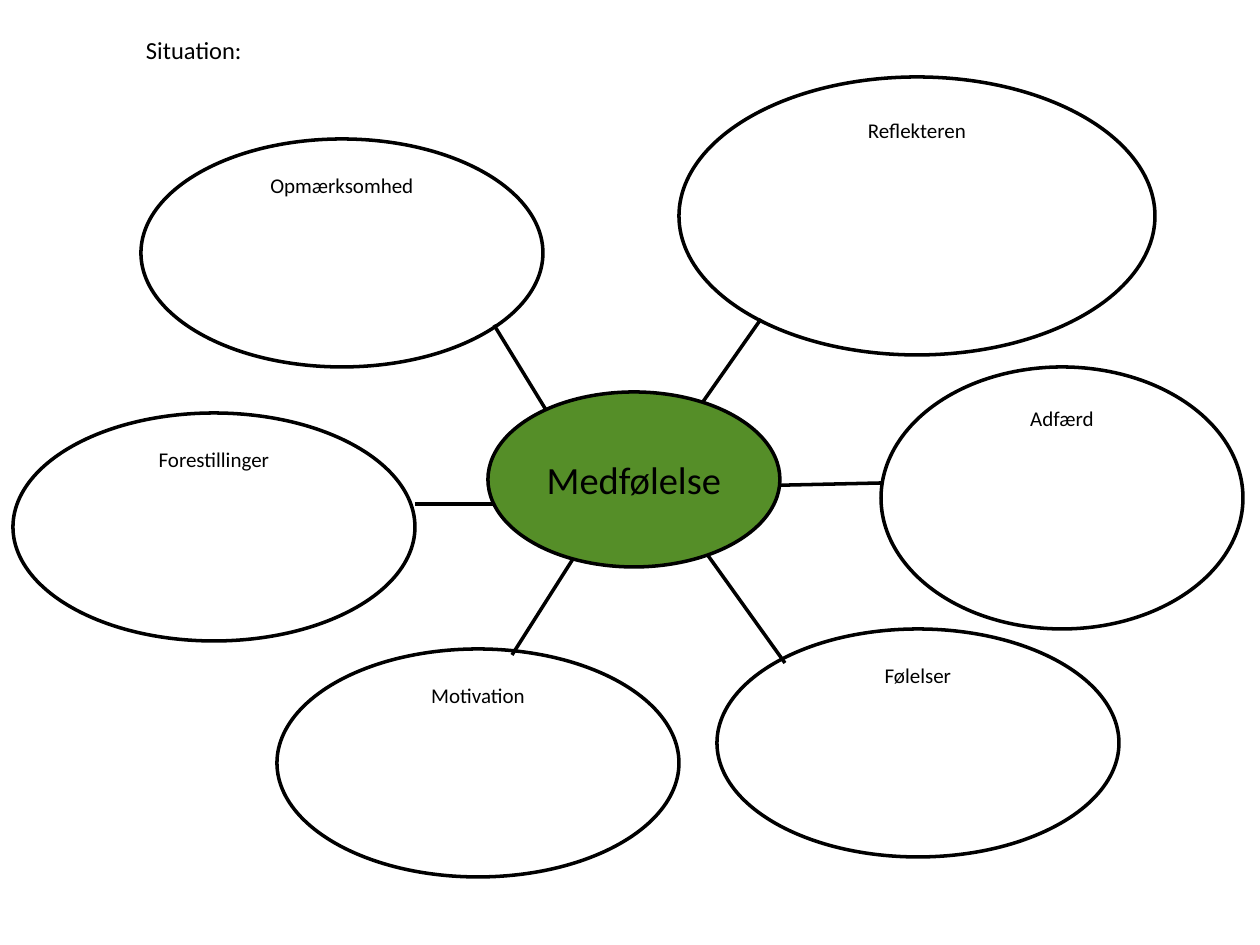
from pptx import Presentation
from pptx.dml.color import RGBColor
from pptx.enum.shapes import MSO_CONNECTOR, MSO_SHAPE
from pptx.enum.text import MSO_ANCHOR, PP_ALIGN
from pptx.oxml.ns import qn
from pptx.util import Pt

ELLIPSE = MSO_SHAPE.OVAL
STRAIGHT = MSO_CONNECTOR.STRAIGHT
TOP, MIDDLE = MSO_ANCHOR.TOP, MSO_ANCHOR.MIDDLE
LEFT, CENTER = PP_ALIGN.LEFT, PP_ALIGN.CENTER

BLACK = RGBColor(0x00, 0x00, 0x00)
GREEN = RGBColor(0x55, 0x8E, 0x28)

SCALE = 914400 / 126
INSET = 5
BUBBLE = (402, 228)

THEMES = [
    ("Opmærksomhed", (141, 139), BUBBLE),
    ("Motivation", (277, 649), BUBBLE),
    ("Følelser", (717, 629), BUBBLE),
    ("Forestillinger", (13, 413), BUBBLE),
    ("Adfærd", (881, 367), (362, 262)),
    ("Reflekteren", (679, 77), (476, 278)),
]
SPOKES = [
    ((745, 486), (881, 483)),
    ((573, 559), (512, 655)),
    ((694, 536), (785, 663)),
    ((494, 325), (562, 436)),
    ((415, 504), (512, 504)),
    ((761, 319), (679, 436)),
]


def px(*lengths):
    """Turn lengths in px into EMU."""
    return [round(length * SCALE) for length in lengths]


def set_values(target, values):
    """Set attributes of an object from a dict."""
    for name, value in values.items():
        setattr(target, name, value)


def write_text(box, text, size, align, anchor):
    """Write one indented paragraph into a box."""
    inset = px(INSET)[0]
    frame = box.text_frame
    set_values(frame, {
        "margin_left": 0, "margin_top": 0, "margin_right": inset,
        "margin_bottom": 0, "word_wrap": True, "vertical_anchor": anchor,
    })
    para = frame.paragraphs[0]
    para.alignment = align
    set_values_xml = para._p.get_or_add_pPr().set
    set_values_xml("marL", str(inset))
    set_values_xml("indent", "0")
    span = para.add_run()
    span.text = text
    set_values(span.font, {"name": "Calibri", "size": Pt(size)})
    span.font.color.rgb = BLACK


def draw_outline(line):
    """Give a line the common stroke."""
    line.color.rgb = BLACK
    line.width = Pt(2)


def add_bubble(page, text, corner, extent, size=12, anchor=TOP, fill=None):
    """Add an ellipse with a centred label."""
    bubble = page.shapes.add_shape(ELLIPSE, *px(*corner, *extent))
    bubble.shadow.inherit = False
    if fill is None:
        bubble.fill.background()
    else:
        bubble.fill.solid()
        bubble.fill.fore_color.rgb = fill
    draw_outline(bubble.line)
    write_text(bubble, text, size, CENTER, anchor)


def add_spoke(page, start, end):
    """Add a straight line between two points."""
    spoke = page.shapes.add_connector(STRAIGHT, *px(*start, *end))
    draw_outline(spoke.line)
    properties = spoke._element.spPr
    properties.append(properties.makeelement(qn("a:effectLst"), {}))


def main():
    """Build the slide and save it."""
    deck = Presentation()
    deck.slide_width, deck.slide_height = px(1260, 945)
    page = deck.slides.add_slide(deck.slide_layouts[6])
    for theme in THEMES:
        add_bubble(page, *theme)
    for spoke in SPOKES:
        add_spoke(page, *spoke)
    heading = page.shapes.add_textbox(*px(141, 35, 976, 88))
    write_text(heading, "Situation:", 14, LEFT, TOP)
    add_bubble(page, "Medfølelse", (488, 392), (292, 175), 22, MIDDLE, GREEN)
    deck.save("out.pptx")


if __name__ == "__main__":
    main()
